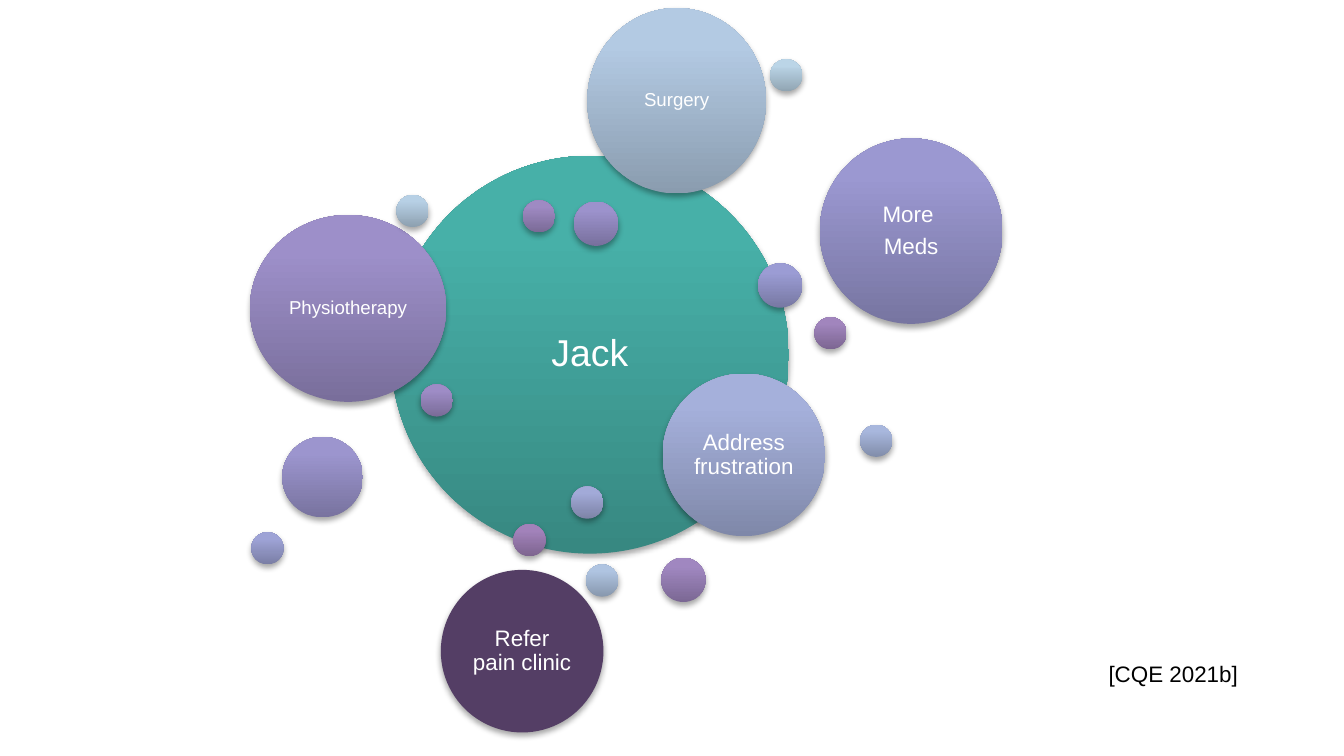
import pptx
import pptx.dml.color
import pptx.enum.shapes
import pptx.enum.text
import pptx.oxml
import pptx.oxml.ns
import pptx.util
from pptx.util import Inches

SHADOW = (
    f'<a:outerShdw {pptx.oxml.ns.nsdecls("a")} blurRad="40000" dist="23000" '
    'dir="5400000" rotWithShape="0"><a:srgbClr val="000000">'
    '<a:alpha val="35000"/></a:srgbClr></a:outerShdw>'
)
SMALL, MEDIUM = 0.24, 0.33


def rgb(hex_code):
    return pptx.dml.color.RGBColor.from_string(hex_code)


def shade(hex_code, factor=0.77):
    """Darken a hex colour by multiplying each channel."""
    channels = (int(hex_code[i:i + 2], 16) for i in (0, 2, 4))
    return "".join(f"{round(channel * factor):02X}" for channel in channels)


class BubbleSlide:
    font = "Arial"
    label_color = "FFFFFF"
    note_color = "000000"

    def __init__(self, presentation):
        self.slide = presentation.slides.add_slide(presentation.slide_layouts[6])

    def style(self, paragraph, size, color):
        paragraph.font.name = self.font
        paragraph.font.size = pptx.util.Pt(size)
        paragraph.font.color.rgb = rgb(color)

    def bubble(self, left, top, width, height, color, flat=False):
        circle = self.slide.shapes.add_shape(
            pptx.enum.shapes.MSO_SHAPE.OVAL,
            Inches(left), Inches(top), Inches(width), Inches(height))
        circle.line.fill.background()
        if flat:
            circle.fill.solid()
            circle.fill.fore_color.rgb = rgb(color)
        else:
            circle.fill.gradient()
            circle.fill.gradient_angle = 90
            bottom, top_stop = circle.fill.gradient_stops
            bottom.color.rgb = rgb(shade(color))
            top_stop.color.rgb = rgb(color)
            top_stop.position = 0.8
        circle.shadow.inherit = False
        effects = circle._element.spPr.find(pptx.oxml.ns.qn("a:effectLst"))
        effects.append(pptx.oxml.parse_xml(SHADOW))
        return circle

    def topic(self, left, top, width, height, color, label, size, inset=0.05, flat=False):
        frame = self.bubble(left, top, width, height, color, flat).text_frame
        frame.word_wrap = True
        frame.vertical_anchor = pptx.enum.text.MSO_ANCHOR.MIDDLE
        frame.margin_left = frame.margin_right = Inches(inset)
        frame.margin_top = frame.margin_bottom = Inches(inset)
        frame.text = label
        for paragraph in frame.paragraphs:
            paragraph.alignment = pptx.enum.text.PP_ALIGN.CENTER
            paragraph.line_spacing = 0.9
            paragraph.space_after = pptx.util.Pt(size * 0.35)
            self.style(paragraph, size, self.label_color)

    def dots(self, *dots):
        for left, top, diameter, color in dots:
            self.bubble(left, top, diameter, diameter, color)

    def note(self, left, top, width, height, text, size):
        frame = self.slide.shapes.add_textbox(
            Inches(left), Inches(top), Inches(width), Inches(height)).text_frame
        frame.word_wrap = False
        frame.auto_size = pptx.enum.text.MSO_AUTO_SIZE.SHAPE_TO_FIT_TEXT
        frame.text = text
        self.style(frame.paragraphs[0], size, self.note_color)


def main():
    presentation = pptx.Presentation()
    presentation.slide_width = Inches(10)
    presentation.slide_height = Inches(10) * 9 // 16
    options = BubbleSlide(presentation)

    # Back to front, so that later bubbles overlap earlier ones
    options.topic(2.91, 1.16, 2.96, 2.96, "47B0A8", "Jack", 20, inset=0.08)
    options.dots(
        (3.82, 3.9, SMALL, "A282BA"),
        (6.06, 2.36, SMALL, "A185BD"),
        (4.92, 4.15, MEDIUM, "A087C0"),
        (3.89, 1.49, SMALL, "9F8AC3"),
        (3.13, 2.86, SMALL, "9E8CC6"),
    )
    options.topic(1.86, 1.6, 1.46, 1.39, "9D8FC9", "Physiotherapy", 10, inset=0.04)
    options.dots(
        (4.27, 1.5, MEDIUM, "9C92CC"),
        (2.1, 3.25, 0.6, "9C95CE"),
    )
    options.topic(6.1, 1.03, 1.36, 1.38, "9B98D1", "More \nMeds", 12)
    options.dots(
        (5.64, 1.96, MEDIUM, "9B9CD4"),
        (1.87, 3.96, SMALL, "9EA3D6"),
        (4.25, 3.62, SMALL, "A2AAD8"),
    )
    options.topic(4.93, 2.78, 1.21, 1.21, "A5B0DB", "Address frustration", 12)
    options.dots((6.4, 3.16, SMALL, "A8B7DD"))
    options.topic(3.28, 4.24, 1.21, 1.21, "543E65", "Refer pain clinic", 12, flat=True)
    options.dots((4.36, 4.2, SMALL, "AFC4E1"))
    options.topic(4.37, 0.06, 1.33, 1.38, "B3CAE3", "Surgery", 10, inset=0.04)
    options.dots(
        (2.95, 1.45, SMALL, "B7D0E5"),
        (5.73, 0.44, SMALL, "BBD5E7"),
    )
    options.note(8.15, 4.86, 1.17, 0.3, "[CQE 2021b]", 12)

    presentation.save("out.pptx")


if __name__ == "__main__":
    main()
